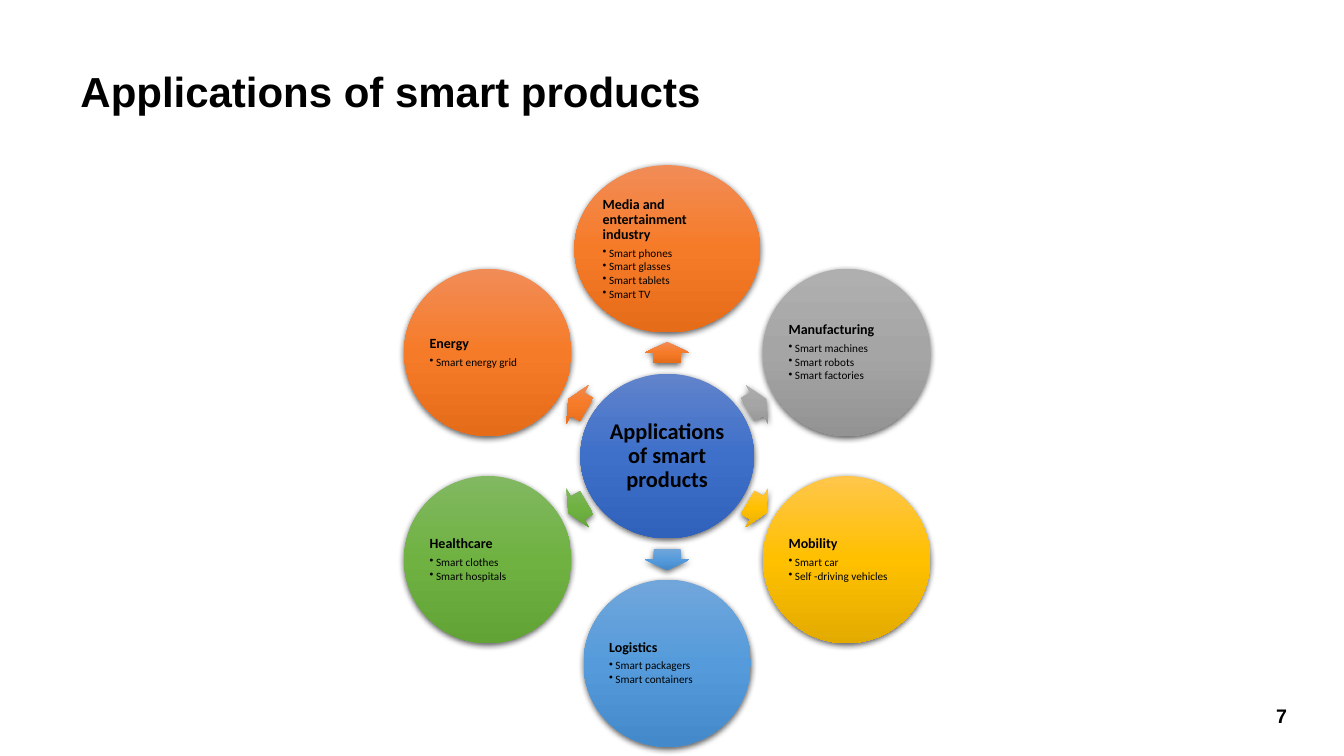
from math import cos, radians, sin

from pptx import Presentation
from pptx.dml.color import RGBColor
from pptx.enum.shapes import MSO_SHAPE as Shape
from pptx.enum.text import MSO_ANCHOR as Anchor, PP_ALIGN as Align
from pptx.oxml import parse_xml
from pptx.oxml.ns import nsdecls, qn
from pptx.util import Pt

NS = nsdecls("a")
BLUE = ("6183CB", "3E70CA", "3062BB")
ORANGE = ("F18C57", "F67B28", "E56C19")
GREY = ("AFAFAF", "A5A5A5", "939393")
GOLD = ("FFC64B", "FFC000", "E3AB00")
SKY = ("71A6DB", "559BDB", "448ACA")
GREEN = ("81B861", "6FB242", "62A336")

# Clockwise from the top: heading, items, shades, circle width
FIELDS = [
    ("Media and entertainment industry",
     ["Smart phones", "Smart glasses", "Smart tablets", "Smart TV"], ORANGE, 132.5),
    ("Manufacturing", ["Smart machines", "Smart robots", "Smart factories"], GREY, 119.5),
    ("Mobility", ["Smart car", "Self -driving vehicles"], GOLD, 119.5),
    ("Logistics", ["Smart packagers", "Smart containers"], SKY, 119.5),
    ("Healthcare", ["Smart clothes", "Smart hospitals"], GREEN, 119.5),
    ("Energy", ["Smart energy grid"], ORANGE, 119.5),
]


def color(code):
    return RGBColor.from_string(code)


def style(para, size, face, bold=True, align=Align.LEFT):
    para.alignment = align
    font = para.font
    font.size, font.name, font.bold = Pt(size), face, bold
    font.color.rgb = color("000000")


def paint(shape, shades):
    """Give a shape a vertical three-stop gradient and a soft drop shadow."""
    stops = "".join(
        f'<a:gs pos="{i * 50000}"><a:srgbClr val="{color(c)}"/></a:gs>'
        for i, c in enumerate(shades))
    grad = parse_xml(
        f'<a:gradFill {NS} rotWithShape="0"><a:gsLst>{stops}</a:gsLst>'
        '<a:lin ang="5400000" scaled="0"/></a:gradFill>')
    props = shape.element.spPr
    props.find(qn("a:prstGeom")).addnext(grad)
    shape.line.fill.background()
    shape.shadow.inherit = False
    props.find(qn("a:effectLst")).append(parse_xml(
        f'<a:outerShdw {NS} blurRad="{Pt(4.5)}" dist="{Pt(1.5)}" dir="5400000" '
        'algn="ctr" rotWithShape="0"><a:srgbClr val="000000">'
        '<a:alpha val="63000"/></a:srgbClr></a:outerShdw>'))


def centred(slide, kind, x, y, width, height, shades):
    """Add a painted shape around a centre point."""
    shape = slide.shapes.add_shape(
        kind, Pt(x - width / 2), Pt(y - height / 2), Pt(width), Pt(height))
    paint(shape, shades)
    return shape


def circle(slide, x, y, width, height, shades, inset):
    """Add a circle and return its text frame."""
    frame = centred(slide, Shape.OVAL, x, y, width, height, shades).text_frame
    frame.word_wrap = True
    frame.vertical_anchor = Anchor.MIDDLE
    frame.margin_left = frame.margin_right = Pt(inset)
    frame.margin_top = frame.margin_bottom = Pt(inset)
    return frame


def bullet(para):
    para.level = 1
    props = para._p.get_or_add_pPr()
    props.set("marL", str(Pt(4.5)))
    props.set("indent", str(-Pt(4.5)))
    props.append(parse_xml(f'<a:buChar {NS} char="•"/>'))


def topic(frame, heading, items):
    head = frame.paragraphs[0]
    head.text = heading
    head.line_spacing, head.space_after = 0.9, Pt(3.5)
    style(head, 10, "Calibri")
    for item in items:
        para = frame.add_paragraph()
        para.text = item
        para.line_spacing, para.space_after = 0.9, Pt(1.2)
        bullet(para)
        style(para, 8, "Calibri", bold=False)


def wheel(slide, left, top, width, height):
    """Fill the box with a hub and its ring of topics."""
    x, y = left + width / 2, top + height / 2
    ring = (height - 119.5) / 2
    hub = circle(slide, x, y, 124, 117.5, BLUE, 1.5).paragraphs[0]
    hub.text = "Applications of smart products"
    hub.line_spacing = 0.9
    style(hub, 16, "Calibri", align=Align.CENTER)
    for i, (heading, items, shades, span) in enumerate(FIELDS):
        angle = i * 360 / len(FIELDS) - 90
        dx, dy = cos(radians(angle)), sin(radians(angle))
        arrow = centred(slide, Shape.RIGHT_ARROW, x + ring * dx / 2,
                        y + ring * dy / 2, 15, 31.7, shades)
        arrow.adjustments[0] = 0.6
        arrow.rotation = angle % 360
        frame = circle(slide, x + ring * dx, y + ring * dy, span, 119.5, shades, 0.8)
        topic(frame, heading, items)


def label(slide, text, box, size, align=Align.LEFT, anchor=Anchor.TOP):
    frame = slide.shapes.add_textbox(*map(Pt, box)).text_frame
    frame.word_wrap = True
    frame.vertical_anchor = anchor
    para = frame.paragraphs[0]
    para.text = text
    para.line_spacing = 0.9
    style(para, size, "Arial", align=align)


def main():
    deck = Presentation()
    deck.slide_width, deck.slide_height = Pt(960), Pt(540)
    slide = deck.slides.add_slide(deck.slide_layouts[6])
    label(slide, "Applications of smart products", (50.4, 47.5, 707, 40.3), 30)
    wheel(slide, 288.6, 118, 376, 415.5)
    label(slide, "7", (879, 494.6, 72.7, 28.8), 14, Align.CENTER, Anchor.BOTTOM)
    deck.save("out.pptx")


if __name__ == "__main__":
    main()
